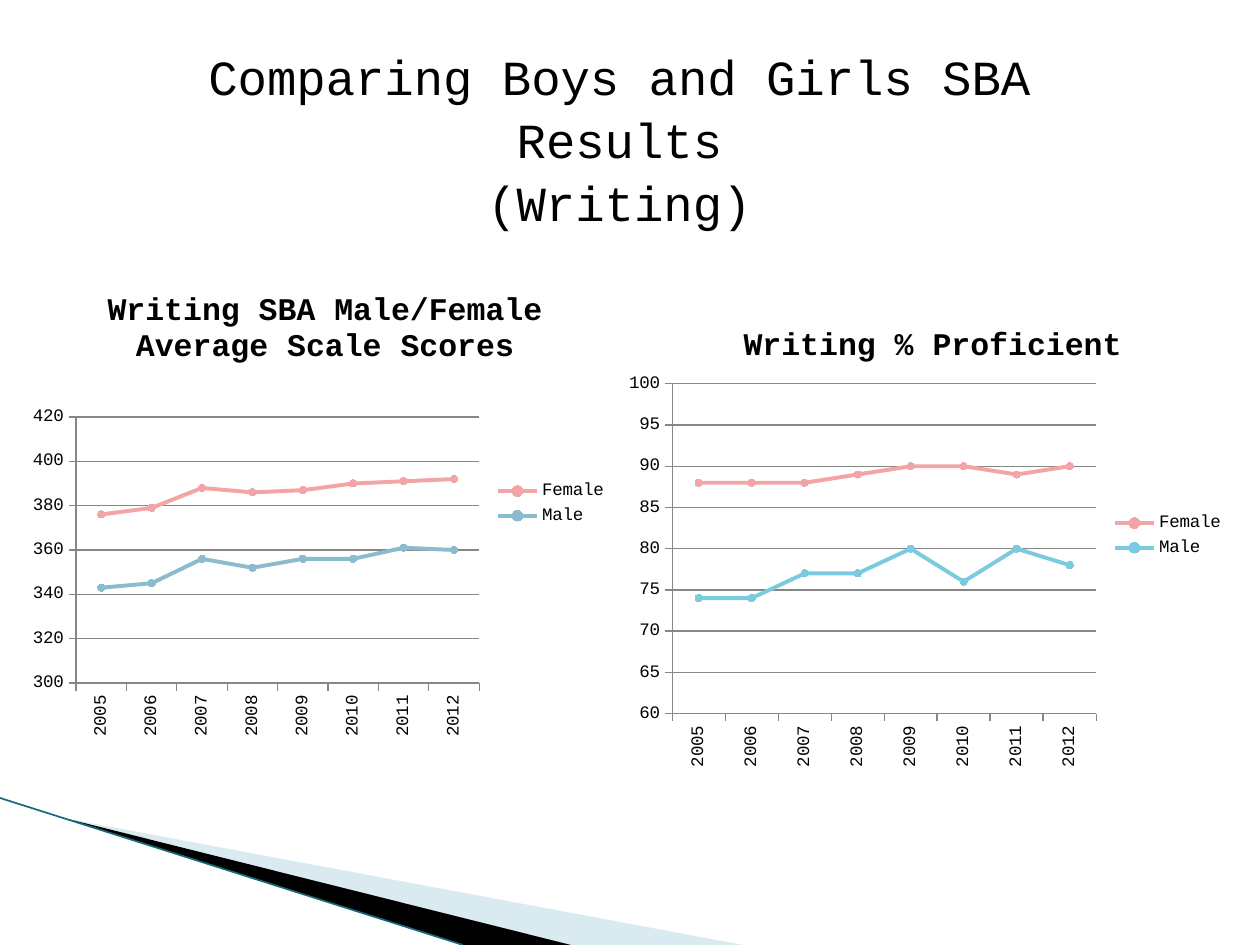
from lxml.etree import SubElement
from pptx import Presentation
from pptx.chart.data import CategoryChartData
from pptx.dml.color import RGBColor
from pptx.enum.chart import XL_CHART_TYPE as ChartType, XL_LEGEND_POSITION as LegendSide
from pptx.enum.chart import XL_MARKER_STYLE as Marker, XL_TICK_MARK as Tick
from pptx.enum.shapes import MSO_CONNECTOR as Connector
from pptx.enum.text import MSO_ANCHOR as Anchor, MSO_AUTO_SIZE as AutoSize, PP_ALIGN as Align
from pptx.oxml.ns import qn
from pptx.util import Emu, Pt

SCALE = 914400 / 126
FONT = "Courier New"
BLACK, GRAY, PINK = "000000", "868686", "F2A4A7"
YEARS = [str(year) for year in range(2005, 2013)]


def px(length):
    return Emu(round(length * SCALE))


def color(value):
    return RGBColor.from_string(value)


def style_font(font, size, bold=False):
    font.name, font.size, font.bold = FONT, Pt(size), bold
    font.color.rgb = color(BLACK)


def style_line(line, value, width):
    line.color.rgb = color(value)
    line.width = Pt(width)


def set_layout(parent, index, inner=False, **fractions):
    """Give a chart part a fixed place, in fractions of the chart."""
    layout = parent.find(qn("c:layout"))
    if layout is not None:
        parent.remove(layout)
    layout = parent.makeelement(qn("c:layout"), {})
    parent.insert(index, layout)
    manual = SubElement(layout, qn("c:manualLayout"))
    settings = {"layoutTarget": "inner"} if inner else {}
    settings.update(xMode="edge", yMode="edge", **fractions)
    for name, value in settings.items():
        SubElement(manual, qn(f"c:{name}")).set("val", str(value))


def add_wedge(page, points, fill, alpha=None):
    builder = page.shapes.build_freeform(*points[0], scale=SCALE)
    builder.add_line_segments(points[1:], close=True)
    wedge = builder.convert_to_shape()
    wedge.shadow.inherit = False
    wedge.line.fill.background()
    wedge.fill.solid()
    wedge.fill.fore_color.rgb = color(fill)
    if alpha:
        tint = next(wedge._element.spPr.iter(qn("a:srgbClr")))
        SubElement(tint, qn("a:alpha")).set("val", str(alpha * 1000))


def add_corner(page, left, top, width, height):
    right, bottom = left + width, top + height
    tip = (left + 68, top + 21)
    add_wedge(page, [tip, (right, bottom), (left + 570, bottom)], "A0CBDC", 40)
    add_wedge(page, [tip, (left + 571, bottom), (left + 463, bottom)], BLACK)
    edge = page.shapes.add_connector(
        Connector.STRAIGHT, px(left), px(top), px(left + 463), px(bottom))
    style_line(edge.line, "17697C", 0.95)
    SubElement(edge._element.spPr, qn("a:effectLst"))


def add_title(page, lines, left, top, width, height):
    title = page.shapes.title
    title.left, title.top, title.width, title.height = map(px, (left, top, width, height))
    frame = title.text_frame
    frame.word_wrap, frame.auto_size = True, AutoSize.NONE
    frame.vertical_anchor = Anchor.TOP
    for number, line in enumerate(lines):
        para = frame.add_paragraph() if number else frame.paragraphs[0]
        para.alignment, para.line_spacing = Align.CENTER, 1.07
        span = para.add_run()
        span.text = line
        style_font(span.font, 28)


def style_axis(axis):
    axis.major_tick_mark, axis.minor_tick_mark = Tick.OUTSIDE, Tick.NONE
    style_font(axis.tick_labels.font, 10)
    style_line(axis.format.line, GRAY, 0.75)


def add_scores(page, box, plot, heading, heading_at, scale, series):
    """Add a line chart in box; plot and heading_at are relative to the box."""
    data = CategoryChartData()
    data.categories = YEARS
    for name, _, values in series:
        data.add_series(name, values)
    chart = page.shapes.add_chart(ChartType.LINE_MARKERS, *map(px, box), data).chart
    style_font(chart.font, 10)

    width, height = box[2:]
    span = chart.chart_title.text_frame.paragraphs[0].add_run()
    span.text = heading
    style_font(span.font, 18, bold=True)
    set_layout(chart.chart_title._element, 1,
               x=round(heading_at[0] / width, 3), y=round(heading_at[1] / height, 3))
    set_layout(chart._chartSpace.chart.plotArea, 0, inner=True,
               x=round(plot[0] / width, 3), y=round(plot[1] / height, 3),
               w=round(plot[2] / width, 3), h=round(plot[3] / height, 3))

    chart.has_legend = True
    chart.legend.position = LegendSide.RIGHT
    chart.legend.include_in_layout = False
    style_font(chart.legend.font, 10)

    years, scores = chart.category_axis, chart.value_axis
    style_axis(years)
    style_axis(scores)
    years._element.find(qn("c:txPr")).find(qn("a:bodyPr")).set("rot", "-5400000")
    scores.minimum_scale, scores.maximum_scale, scores.major_unit = scale
    scores.has_major_gridlines = True
    style_line(scores.major_gridlines.format.line, GRAY, 0.75)

    for line, (_, value, _) in zip(chart.plots[0].series, series):
        line.smooth = False
        style_line(line.format.line, value, 2.25)
        line.marker.style, line.marker.size = Marker.CIRCLE, 4
        line.marker.format.fill.solid()
        line.marker.format.fill.fore_color.rgb = color(value)
        style_line(line.marker.format.line, value, 0.75)


def main():
    deck = Presentation()
    deck.slide_width, deck.slide_height = px(1260), px(945)
    page = deck.slides.add_slide(deck.slide_layouts[5])
    add_corner(page, 0, 798, 743, 147)
    add_title(page, ["Comparing Boys and Girls SBA Results", "(Writing)"], 147, 36, 945, 191)
    add_scores(page, (617, 294, 620, 483), (55, 90, 424, 330),
               "Writing % Proficient", (121, 26), (60, 100, 5),
               [("Female", PINK, [88, 88, 88, 89, 90, 90, 89, 90]),
                ("Male", "7ACBE0", [74, 74, 77, 77, 80, 76, 80, 78])])
    add_scores(page, (21, 262, 599, 483), (55, 155, 403, 266),
               "Writing SBA Male/Female Average Scale Scores", (81, 23), (300, 420, 20),
               [("Female", PINK, [376, 379, 388, 386, 387, 390, 391, 392]),
                ("Male", "8ABBCF", [343, 345, 356, 352, 356, 356, 361, 360])])
    deck.save("out.pptx")


if __name__ == "__main__":
    main()
